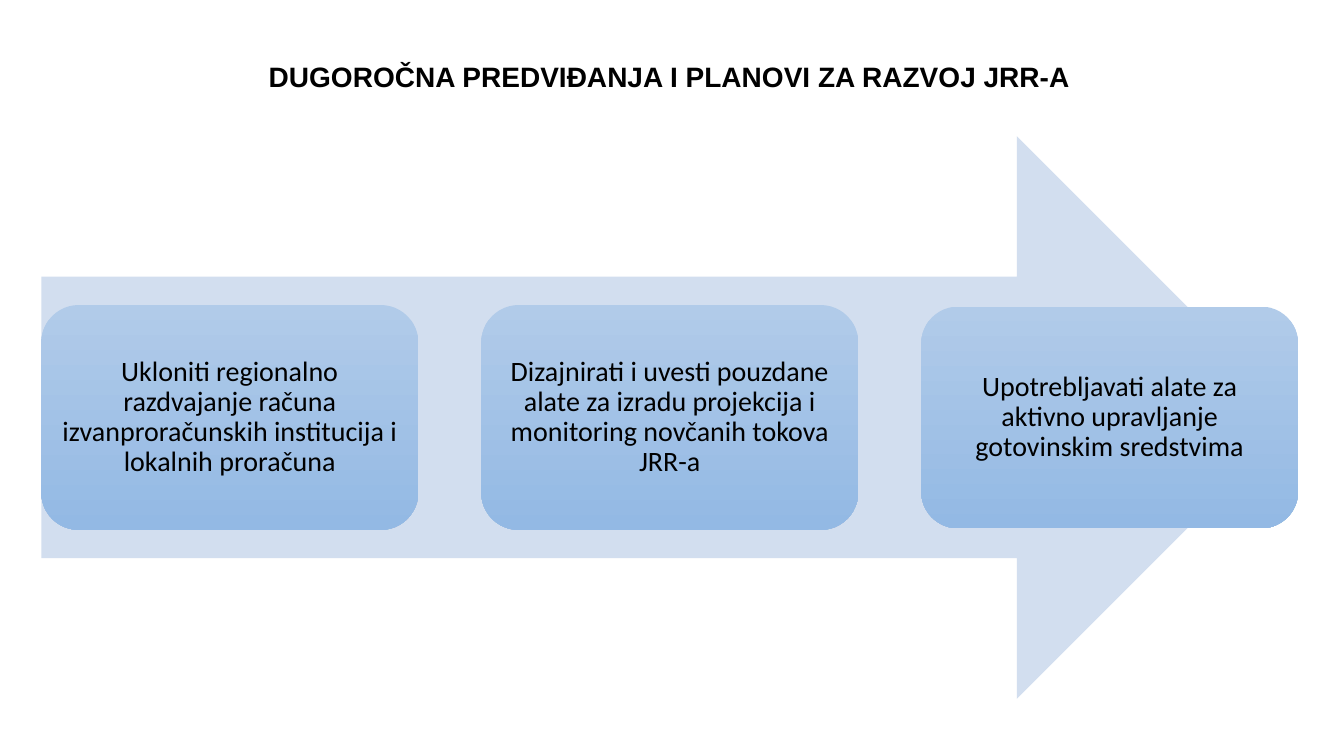
from pptx import Presentation
from pptx.dml.color import RGBColor
from pptx.enum import shapes as sh, text as tx
from pptx.util import Pt


def rgb(code):
    return RGBColor.from_string(code)


def write(shape, words, font, bold, anchor):
    frame = shape.text_frame
    frame.word_wrap = True
    frame.auto_size = tx.MSO_AUTO_SIZE.NONE
    frame.vertical_anchor = anchor
    para = frame.paragraphs[0]
    para.alignment = tx.PP_ALIGN.CENTER
    run = para.add_run()
    run.text = words
    run.font.name = font
    run.font.size = Pt(20)
    run.font.bold = bold
    run.font.color.rgb = rgb("000000")
    return frame, para


deck = Presentation()
deck.slide_width, deck.slide_height = Pt(960), Pt(540)
slide = deck.slides.add_slide(deck.slide_layouts[5])

# Title
title = slide.shapes.title
title.left, title.top, title.width, title.height = Pt(43.2), Pt(38.9), Pt(869.8), Pt(41)
write(title, "DUGOROČNA PREDVIĐANJA I PLANOVI ZA RAZVOJ JRR-A",
      "Arial", True, tx.MSO_ANCHOR.TOP)

# Arrow behind the steps
left, width, mid = 29.5, 897.8, 298.2
arrow = slide.shapes.add_shape(sh.MSO_SHAPE.RIGHT_ARROW, Pt(left), Pt(97.2), Pt(width), Pt(402))
arrow.shadow.inherit = False
arrow.fill.solid()
arrow.fill.fore_color.rgb = rgb("D2DEEF")
arrow.line.fill.background()

# Steps, spread evenly along the arrow and centred on it
steps = [
    ("Ukloniti regionalno razdvajanje računa izvanproračunskih institucija i lokalnih proračuna", 160.6),
    ("Dizajnirati i uvesti pouzdane alate za izradu projekcija i monitoring novčanih tokova JRR-a", 160.6),
    ("Upotrebljavati alate za aktivno upravljanje gotovinskim sredstvima", 158.4),
]
wide = 269.3
pitch = (width - wide) / (len(steps) - 1)
for i, (words, high) in enumerate(steps):
    box = slide.shapes.add_shape(sh.MSO_SHAPE.ROUNDED_RECTANGLE, Pt(left + i * pitch),
                                 Pt(mid - high / 2), Pt(wide), Pt(high))
    box.shadow.inherit = False
    box.line.fill.background()
    box.fill.gradient()
    box.fill.gradient_angle = 270
    for stop, code, place in zip(box.fill.gradient_stops, ("B1CBE9", "93B9E4"), (0, 1)):
        stop.color.rgb = rgb(code)
        stop.position = place
    frame, para = write(box, words, "Calibri", False, tx.MSO_ANCHOR.MIDDLE)
    para.line_spacing = 0.9
    frame.margin_left = frame.margin_right = Pt(5.8)
    frame.margin_top = frame.margin_bottom = Pt(5.8)

deck.save("out.pptx")
